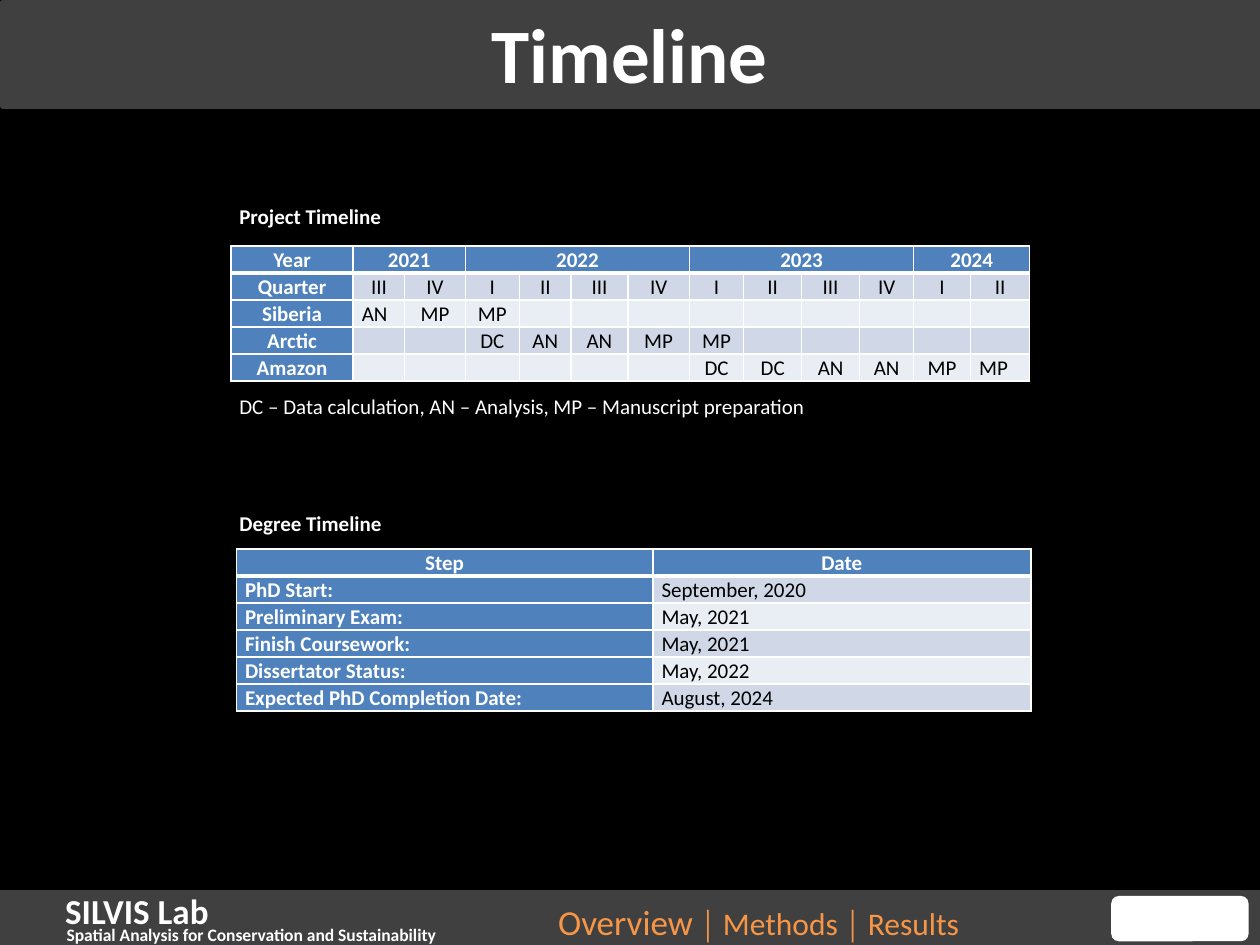
from lxml.etree import SubElement
from pptx import Presentation
from pptx.dml.color import RGBColor
from pptx.enum.shapes import MSO_SHAPE as Shape
from pptx.enum.text import MSO_ANCHOR as Anchor, PP_ALIGN as Align
from pptx.oxml.ns import qn
from pptx.util import Pt

FONT = "Calibri"
BLACK = RGBColor(0x00, 0x00, 0x00)
WHITE = RGBColor(0xFF, 0xFF, 0xFF)
GRAY = RGBColor(0x40, 0x40, 0x40)
ORANGE = RGBColor(0xF7, 0x96, 0x46)
BLUE = RGBColor(0x4F, 0x81, 0xBD)
BANDS = (RGBColor(0xD0, 0xD8, 0xE8), RGBColor(0xE9, 0xED, 0xF4))

ROW_HEIGHT = 15.4
PROJECT_COLUMNS = (69.8, 29.5, 34.6, 31, 29.5, 32.4, 35.3,
                   31, 33.1, 33.1, 31, 32.4, 33.8)
YEARS = {1: ("2021", 2), 3: ("2022", 4), 7: ("2023", 4), 11: ("2024", 2)}
QUARTERS = ["III", "IV"] + ["I", "II", "III", "IV"] * 2 + ["I", "II"]
# Site: (column of the first task, tasks by quarter)
SITES = {
    "Siberia": (1, ["AN", "MP", "MP"]),
    "Arctic": (3, ["DC", "AN", "AN", "MP", "MP"]),
    "Amazon": (7, ["DC", "DC", "AN", "AN", "MP", "MP"]),
}
DEGREE_ROWS = [
    ["Step", "Date"],
    ["PhD Start:", "September, 2020"],
    ["Preliminary Exam:", "May, 2021"],
    ["Finish Coursework:", "May, 2021"],
    ["Dissertator Status:", "May, 2022"],
    ["Expected PhD Completion Date:", "August, 2024"],
]


def style(run, size, color, bold=False):
    run.font.name = FONT
    run.font.size = Pt(size)
    run.font.color.rgb = color
    run.font.bold = bold


def add_block(slide, preset, box, color, line_width=0):
    block = slide.shapes.add_shape(preset, *map(Pt, box))
    block.shadow.inherit = False
    block.fill.solid()
    block.fill.fore_color.rgb = color
    if line_width:
        block.line.color.rgb = color
        block.line.width = Pt(line_width)
    else:
        block.line.fill.background()


def add_text(slide, box, text, size, color=WHITE, bold=False):
    frame = slide.shapes.add_textbox(*map(Pt, box)).text_frame
    frame.word_wrap = True
    frame.text = text
    style(frame.paragraphs[0].runs[0], size, color, bold)
    return frame


def add_caption(slide, box, text, bold=False):
    frame = add_text(slide, box, text, 12, bold=bold)
    frame.margin_left, frame.margin_top = Pt(10.8), Pt(7.4)


def set_borders(cell, top, bottom):
    """Draw white cell borders; they must come before the fill."""
    properties = cell._tc.get_or_add_tcPr()
    for side, width in (("L", 1), ("R", 1), ("T", top), ("B", bottom)):
        line = SubElement(properties, qn(f"a:ln{side}"), w=str(Pt(width)))
        fill = SubElement(line, qn("a:solidFill"))
        SubElement(fill, qn("a:srgbClr"), val=str(WHITE))


def add_grid(slide, left, top, columns, rows, centered):
    """Table with a blue header row and column, and banded body rows."""
    table = slide.shapes.add_table(
        len(rows), len(columns), Pt(left), Pt(top),
        Pt(sum(columns)), Pt(ROW_HEIGHT * len(rows))).table
    for column, width in zip(table.columns, columns):
        column.width = Pt(width)
    for r, texts in enumerate(rows):
        table.rows[r].height = Pt(ROW_HEIGHT)
        for c, text in enumerate(texts):
            cell = table.cell(r, c)
            heading = r == 0 or c == 0
            set_borders(cell, 3 if r == 1 else 1, 3 if r == 0 else 1)
            cell.fill.solid()
            cell.fill.fore_color.rgb = BLUE if heading else BANDS[(r - 1) % 2]
            cell.margin_left = cell.margin_right = Pt(5)
            cell.margin_top = cell.margin_bottom = 0
            cell.text = text
            paragraph = cell.text_frame.paragraphs[0]
            paragraph.line_spacing = 1.07
            paragraph.alignment = Align.CENTER if centered or r == 0 else Align.LEFT
            for run in paragraph.runs:
                style(run, 12, WHITE if heading else BLACK, heading)
            if not text:
                # Keeps empty cells from stretching their row
                SubElement(paragraph._p, qn("a:endParaRPr"), sz="1200")
    return table


def add_header(slide, left, top, width, height):
    add_block(slide, Shape.RECTANGLE, (left + 1.4, top + 1.4, width - 1.4, height - 0.8),
              GRAY, 3)
    title = add_text(slide, (left, top, width, height), "Timeline", 44, bold=True)
    title.vertical_anchor = Anchor.MIDDLE
    title.paragraphs[0].alignment = Align.CENTER


def add_footer(slide, left, top, width, height):
    add_block(slide, Shape.RECTANGLE, (left, top, width, height), GRAY, 3)
    add_text(slide, (left + 30.2, top - 5, 175, 31.7), "SILVIS Lab", 20, bold=True)
    add_text(slide, (left + 31, top + 14.4, 354, 12.2),
             "Spatial Analysis for Conservation and Sustainability", 10, bold=True)
    add_block(slide, Shape.ROUNDED_RECTANGLE, (left + 635, top + 2.2, 78.5, 25.9), WHITE)
    # Section navigation, current section larger
    sections = add_text(slide, (left + 311.8, top + 1.4, 264, 31.7), "Overview", 20, ORANGE)
    others = sections.paragraphs[0].add_run()
    others.text = " │ Methods │ Results"
    style(others, 18, ORANGE)


def add_project_timeline(slide, left, top):
    add_caption(slide, (left, top, 180, 26.6), "Project Timeline", bold=True)
    rows = [["Year"] + [YEARS.get(c, ("",))[0] for c in range(1, 13)],
            ["Quarter"] + QUARTERS]
    for site, (start, tasks) in SITES.items():
        row = [site] + [""] * 12
        row[start:start + len(tasks)] = tasks
        rows.append(row)
    table = add_grid(slide, left + 6, top + 31.8, PROJECT_COLUMNS, rows, True)
    for start, (_, span) in YEARS.items():
        table.cell(0, start).merge(table.cell(0, start + span - 1))
    # The first and last tasks are left-aligned
    for r, c in ((2, 1), (4, 12)):
        table.cell(r, c).text_frame.paragraphs[0].alignment = Align.LEFT
    add_caption(slide, (left, top + 108.9, 354, 26.6),
                "DC – Data calculation, AN – Analysis, MP – Manuscript preparation")


def add_degree_timeline(slide, left, top):
    add_caption(slide, (left, top, 180, 26.6), "Degree Timeline", bold=True)
    add_grid(slide, left + 9, top + 29.3, (238, 216), DEGREE_ROWS, False)


def main():
    deck = Presentation()
    deck.slide_width, deck.slide_height = Pt(720), Pt(540)
    slide = deck.slides.add_slide(deck.slide_layouts[6])
    slide.background.fill.solid()
    slide.background.fill.fore_color.rgb = BLACK
    add_header(slide, 0, 0, 720, 60)
    add_footer(slide, 0, 509.8, 720, 29.5)
    add_project_timeline(slide, 126, 108.7)
    add_degree_timeline(slide, 126, 284.4)
    deck.save("out.pptx")


if __name__ == "__main__":
    main()
